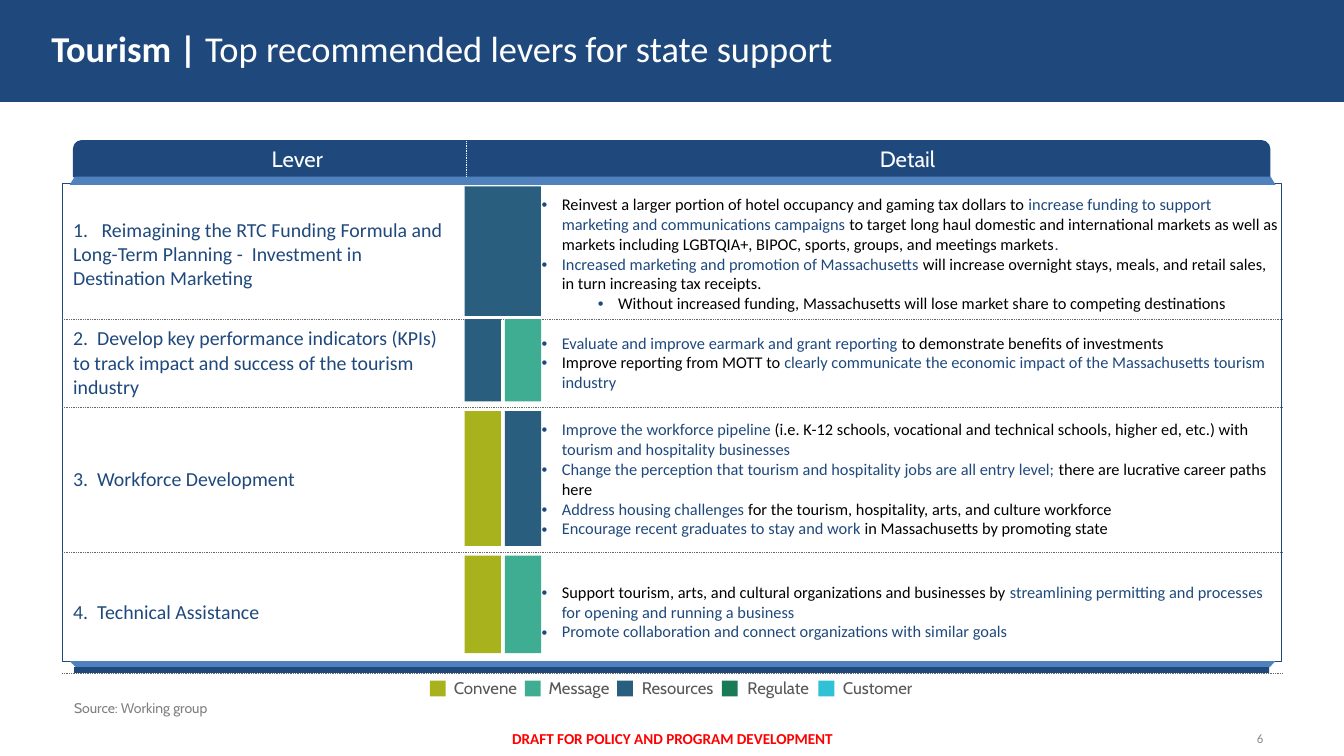
from lxml import etree
from pptx import Presentation
from pptx import util as u
from pptx.dml.color import RGBColor
from pptx.enum import dml, shapes, text
from pptx.oxml.ns import qn

NAVY, BLUE, BLACK, WHITE = "1F497D", "4F81BD", "000000", "FFFFFF"
CONVENE, MESSAGE, RESOURCES, REGULATE, CUSTOMER = "A8B21C", "3EAD92", "295E7E", "197A56", "30C1D7"
PLAIN_TABLE = "{2D5ABB26-0587-4C30-8999-92F81FD0307C}"
SHAPE, ALIGN, ANCHOR = shapes.MSO_SHAPE, text.PP_ALIGN, text.MSO_ANCHOR

LEGEND = [("Convene", CONVENE, 1.96), ("Message", MESSAGE, 1.88), ("Resources", RESOURCES, 2.26),
          ("Regulate", REGULATE, 2.01), ("Customer", CUSTOMER, 2.18)]

# Each lever: name, row height, marker top, marker height, marker colours, detail paragraphs
LEVERS = [
    ("1.   Reimagining the RTC Funding Formula and Long-Term Planning -  Investment in Destination Marketing",
     3.91, 5.64, 3.91, [RESOURCES], [
         (1, [("Reinvest a larger portion of hotel occupancy and gaming tax dollars to ", BLACK),
              ("increase funding to support marketing and communications campaigns ", NAVY),
              ("to target long haul domestic and international markets as well as markets including "
               "LGBTQIA+, BIPOC, sports, groups, and meetings markets", BLACK), (".", NAVY)]),
         (1, [("Increased marketing and promotion of Massachusetts ", NAVY),
              ("will increase overnight stays, meals, and retail sales, in turn increasing tax receipts.", BLACK)]),
         (2, [("Without increased funding, Massachusetts will lose market share to competing destinations",
               BLACK)])]),
    ("2.  Develop key performance indicators (KPIs) to track impact and success of the tourism industry",
     2.67, 9.65, 2.49, [RESOURCES, MESSAGE], [
         (1, [("Evaluate and improve earmark and grant reporting ", NAVY),
              ("to demonstrate benefits of investments", BLACK)]),
         (1, [("Improve reporting from MOTT to ", BLACK),
              ("clearly communicate the economic impact of the Massachusetts tourism industry", NAVY)])]),
    ("3.  Workforce Development", 4.37, 12.43, 4.08, [CONVENE, RESOURCES], [
        (1, [("Improve the workforce pipeline ", NAVY),
             ("(i.e. K-12 schools, vocational and technical schools, higher ed, etc.) with", BLACK),
             (" tourism and hospitality businesses", NAVY)]),
        (1, [("Change the perception that tourism and hospitality jobs are all entry level; ", NAVY),
             ("there are lucrative career paths here", BLACK)]),
        (1, [("Address housing challenges ", NAVY),
             ("for the tourism, hospitality, arts, and culture workforce", BLACK)]),
        (1, [("Encourage recent graduates to stay and work ", NAVY),
             ("in Massachusetts by promoting state", BLACK)])]),
    ("4.  Technical Assistance", 3.66, 16.8, 2.95, [CONVENE, MESSAGE], [
        (1, [("Support tourism, arts, and cultural organizations and businesses by ", BLACK),
             ("streamlining permitting and processes for opening and running a business", NAVY)]),
        (1, [("Promote collaboration and connect organizations with similar goals", NAVY)])]),
]


def rgb(value):
    return RGBColor.from_string(value)


def add_span(para, words, size, color, font="Calibri", bold=False):
    span = para.add_run()
    span.text = words
    span.font.size, span.font.name, span.font.bold = u.Pt(size), font, bold
    span.font.color.rgb = rgb(color)


def add_block(page, kind, left, top, width, height, fill=None, line=None, weight=2):
    block = page.shapes.add_shape(kind, u.Cm(left), u.Cm(top), u.Cm(width), u.Cm(height))
    block.shadow.inherit = False
    if fill:
        block.fill.solid()
        block.fill.fore_color.rgb = rgb(fill)
    else:
        block.fill.background()
    if line:
        block.line.color.rgb = rgb(line)
        block.line.width = u.Pt(weight)
    else:
        block.line.fill.background()
    return block


def add_label(page, left, top, width, height, words, size, color, font="Calibri",
              align=ALIGN.LEFT, anchor=ANCHOR.MIDDLE, wrap=True, bold=False):
    box = page.shapes.add_textbox(u.Cm(left), u.Cm(top), u.Cm(width), u.Cm(height))
    frame = box.text_frame
    frame.word_wrap, frame.vertical_anchor = wrap, anchor
    frame.margin_left = frame.margin_right = frame.margin_top = frame.margin_bottom = 0
    para = frame.paragraphs[0]
    para.alignment = align
    add_span(para, words, size, color, font, bold)


def set_indent(para, left, first=0):
    props = para._p.get_or_add_pPr()
    props.set("marL", str(u.Cm(left)))
    props.set("indent", str(u.Cm(first)))
    return props


def add_bullet(para, level):
    para.level = level
    props = set_indent(para, 0.89 if level == 1 else 2.59, -0.61)
    color = etree.SubElement(props, qn("a:buClr"))
    etree.SubElement(color, qn("a:srgbClr"), val=NAVY)
    etree.SubElement(props, qn("a:buFont"), typeface="Arial")
    etree.SubElement(props, qn("a:buChar"), char="•")


def dot_bottom(cell):
    line = etree.Element(qn("a:lnB"), w=str(u.Pt(0.75)))
    fill = etree.SubElement(line, qn("a:solidFill"))
    etree.SubElement(fill, qn("a:srgbClr"), val="666666")
    etree.SubElement(line, qn("a:prstDash"), val="sysDot")
    cell._tc.get_or_add_tcPr().insert(0, line)


def set_cell(cell, anchor=ANCHOR.MIDDLE, right=0, edge=0.0):
    cell.fill.background()
    cell.vertical_anchor = anchor
    cell.margin_left, cell.margin_right = 0, u.Cm(right)
    cell.margin_top = cell.margin_bottom = u.Cm(edge)
    return cell.text_frame.paragraphs[0]


def draw_title(page, left, top, width, height):
    add_block(page, SHAPE.RECTANGLE, 0, 0, 40.64, 3.05, NAVY, NAVY)
    title = page.shapes.title
    page.shapes._spTree.append(title._element)
    title.left, title.top, title.width, title.height = (u.Cm(n) for n in (left, top, width, height))
    frame = title.text_frame
    frame.auto_size, frame.word_wrap = text.MSO_AUTO_SIZE.NONE, True
    frame.vertical_anchor = ANCHOR.MIDDLE
    frame.margin_left = frame.margin_right = u.Cm(0.41)
    frame.margin_top = frame.margin_bottom = u.Cm(0.2)
    para = frame.paragraphs[0]
    para.alignment = ALIGN.LEFT
    add_span(para, "Tourism | ", 31.2, WHITE, bold=True)
    add_span(para, "Top recommended levers for state support", 31.2, WHITE)


def draw_frame(page, left, top, width):
    header = add_block(page, SHAPE.ROUND_2_SAME_RECTANGLE, left + 0.36, top, width - 0.72, 1.07, NAVY, NAVY)
    header.adjustments[0] = 0.22
    add_block(page, SHAPE.RECTANGLE, left, top + 1.29, width, 14.43, None, NAVY, 0.75)
    ledge = add_block(page, SHAPE.TRAPEZOID, left + 0.23, top + 1.07, width - 0.4, 0.25, BLUE)
    ledge.adjustments[0] = 0.6
    foot = add_block(page, SHAPE.TRAPEZOID, left + 0.23, top + 15.72, width - 0.4, 0.18, BLUE)
    foot.adjustments[0] = 0.97
    foot.rotation = 180
    add_block(page, SHAPE.RECTANGLE, left + 0.36, top + 15.9, width - 0.72, 0.18, NAVY)


def draw_table(page, left, top, width):
    heights = [1.07, 0.2, 0.2] + [lever[1] for lever in LEVERS]
    widths = [12.19, 2.03, width - 14.22]
    holder = page.shapes.add_table(len(heights), 3, u.Cm(left), u.Cm(top), u.Cm(width), u.Cm(sum(heights)))
    table = holder.table
    table.first_row = table.horz_banding = False
    table._tbl.tblPr.find(qn("a:tableStyleId")).text = PLAIN_TABLE
    for column, size in zip(table.columns, widths):
        column.width = u.Cm(size)
    for row, size in zip(table.rows, heights):
        row.height = u.Cm(size)
    # Small type in empty cells keeps the thin rows thin
    for cell in table.iter_cells():
        para = set_cell(cell)
        etree.SubElement(para._p, qn("a:endParaRPr"), sz="100")
    for row in range(3):
        table.cell(row, 0).merge(table.cell(row, 1))
    for column, words in ((0, "Lever"), (2, "Detail")):
        para = set_cell(table.cell(0, column), ANCHOR.BOTTOM, edge=0.11)
        para.alignment = ALIGN.CENTER
        add_span(para, words, 19, WHITE, "Cabin")
    for row, (name, _, _, _, _, details) in enumerate(LEVERS, 3):
        para = set_cell(table.cell(row, 0), right=0.3, edge=0.15)
        set_indent(para, 0.33)
        add_span(para, name, 17, NAVY)
        cell = table.cell(row, 2)
        para = set_cell(cell, edge=0.13)
        for index, (level, spans) in enumerate(details):
            para = cell.text_frame.add_paragraph() if index else para
            add_bullet(para, level)
            for words, color in spans:
                add_span(para, words, 14, color)
        for column in range(3):
            dot_bottom(table.cell(row, column))
    # Header divider
    divider = page.shapes.add_connector(shapes.MSO_CONNECTOR.STRAIGHT, u.Cm(left + 12.22), u.Cm(top),
                                        u.Cm(left + 12.22), u.Cm(top + 1.07))
    divider.line.color.rgb = rgb(WHITE)
    divider.line.width = u.Pt(0.75)
    divider.line.dash_style = dml.MSO_LINE.ROUND_DOT
    etree.SubElement(divider._element.spPr, qn("a:effectLst"))


def draw_markers(page, left, width):
    for _, _, top, height, colors, _ in LEVERS:
        size = (width - 0.12 * (len(colors) - 1)) / len(colors)
        for index, color in enumerate(colors):
            add_block(page, SHAPE.RECTANGLE, left + index * (size + 0.12), top, size, height, color)


def draw_legend(page, left, top):
    for words, color, width in LEGEND:
        add_block(page, SHAPE.RECTANGLE, left, top + 0.08, 0.48, 0.48, color)
        add_label(page, left + 0.7, top, width, 0.61, words, 14.4, "575757", "Cabin", ALIGN.CENTER, wrap=False)
        left += 0.7 + width + 0.21


def draw_footer(page, left, top, width):
    add_label(page, left, top, width, 0.46, "Source: Working group", 12, "808080", "Cabin", anchor=ANCHOR.BOTTOM)
    add_label(page, 13.89, top + 0.51, 12.88, 1.22, "DRAFT FOR POLICY AND PROGRAM DEVELOPMENT", 13, "FF0000",
              align=ALIGN.CENTER, bold=True)
    add_label(page, 29.13, top + 0.51, 9.07, 1.22, "6", 11, "8C8C8C", align=ALIGN.RIGHT)


def main():
    deck = Presentation()
    deck.slide_width, deck.slide_height = u.Cm(40.64), u.Cm(22.86)
    page = deck.slides.add_slide(deck.slide_layouts[5])
    draw_title(page, 1.14, 0.89, 36.45, 1.12)
    draw_frame(page, 1.88, 4.27, 36.86)
    draw_table(page, 1.88, 4.27, 36.9)
    draw_markers(page, 14.05, 2.31)
    draw_legend(page, 13, 20.5)
    draw_footer(page, 2.24, 21.21, 30.1)
    deck.save("out.pptx")


if __name__ == "__main__":
    main()
